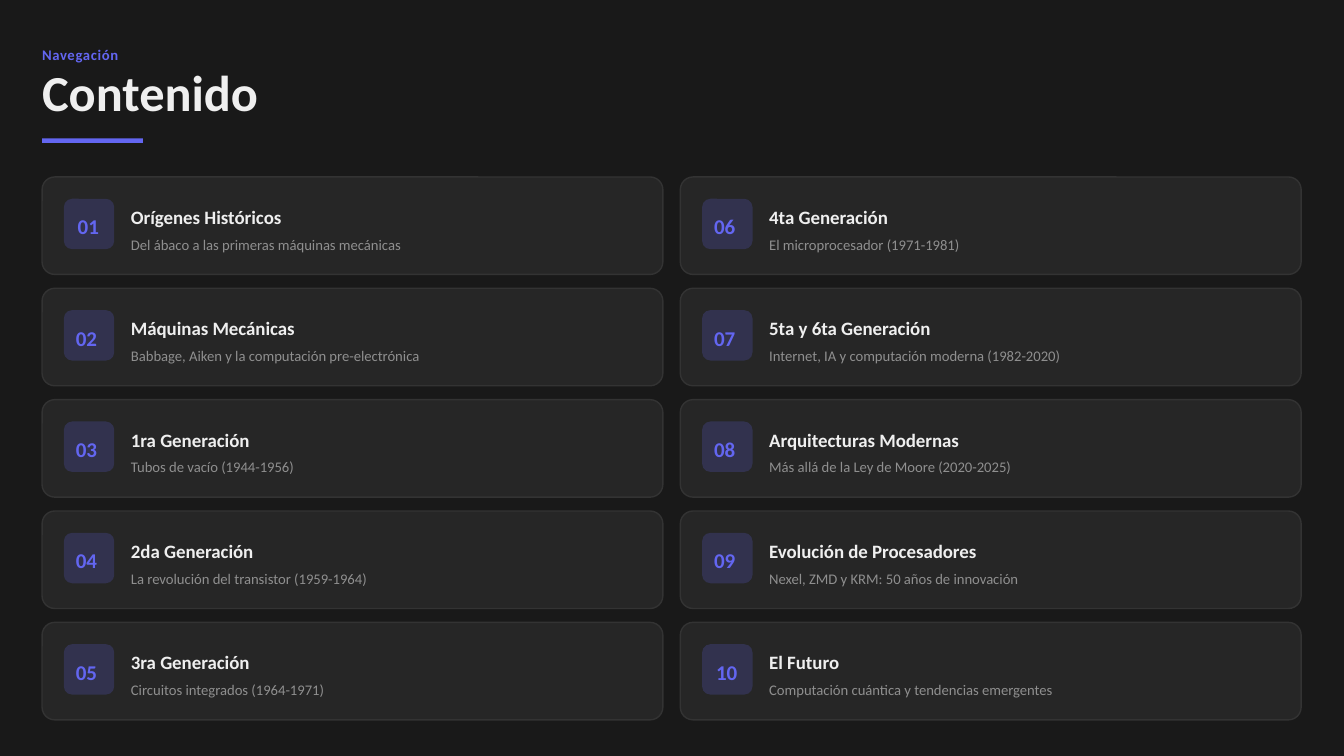
from lxml import etree
from pptx import Presentation, util as u
from pptx.dml import color
from pptx.enum import shapes, text
from pptx.oxml import ns

COLORS = {
    "background": "191919",
    "card": "262626",
    "border": "333333",
    "accent": "6366F1",
    "heading": "EFEFEF",
    "muted": "8F8F8F",
}
FONT = "Calibri"
TOPICS = [
    ("Orígenes Históricos", "Del ábaco a las primeras máquinas mecánicas"),
    ("Máquinas Mecánicas", "Babbage, Aiken y la computación pre-electrónica"),
    ("1ra Generación", "Tubos de vacío (1944-1956)"),
    ("2da Generación", "La revolución del transistor (1959-1964)"),
    ("3ra Generación", "Circuitos integrados (1964-1971)"),
    ("4ta Generación", "El microprocesador (1971-1981)"),
    ("5ta y 6ta Generación", "Internet, IA y computación moderna (1982-2020)"),
    ("Arquitecturas Modernas", "Más allá de la Ley de Moore (2020-2025)"),
    ("Evolución de Procesadores", "Nexel, ZMD y KRM: 50 años de innovación"),
    ("El Futuro", "Computación cuántica y tendencias emergentes"),
]
ROWS = 5


def rgb(name):
    return color.RGBColor.from_string(COLORS[name])


def write(shape, content, size, color_name, bold=False, line_spacing=1.2):
    frame = shape.text_frame
    frame.text = content
    frame.word_wrap = True
    frame.auto_size = text.MSO_AUTO_SIZE.NONE
    frame.vertical_anchor = text.MSO_ANCHOR.MIDDLE
    frame.margin_left = frame.margin_right = frame.margin_top = frame.margin_bottom = 0
    paragraph = frame.paragraphs[0]
    paragraph.alignment = text.PP_ALIGN.LEFT
    paragraph.line_spacing = line_spacing
    run = paragraph.runs[0]
    run.font.name = FONT
    run.font.size = u.Pt(size)
    run.font.bold = bold
    run.font.color.rgb = rgb(color_name)
    return run


def add_text(slide, left, top, width, height, *content, **style):
    box = slide.shapes.add_textbox(u.Cm(left), u.Cm(top), u.Cm(width), u.Cm(height))
    return write(box, *content, **style)


def add_panel(slide, left, top, width, height, fill, radius=0, border=None):
    kind = shapes.MSO_SHAPE.ROUNDED_RECTANGLE if radius else shapes.MSO_SHAPE.RECTANGLE
    panel = slide.shapes.add_shape(kind, u.Cm(left), u.Cm(top), u.Cm(width), u.Cm(height))
    if radius:
        panel.adjustments[0] = radius / min(width, height)
    panel.shadow.inherit = False
    panel.fill.solid()
    panel.fill.fore_color.rgb = rgb(fill)
    if border:
        panel.line.color.rgb = rgb(border)
        panel.line.width = u.Pt(1)
    else:
        panel.line.fill.background()
    return panel


def set_opacity(shape, percent):
    fill_color = shape._element.spPr.find(ns.qn("a:solidFill")).find(ns.qn("a:srgbClr"))
    etree.SubElement(fill_color, ns.qn("a:alpha"), val=str(percent * 1000))


def add_header(slide, left, top, width):
    section = add_text(slide, left, top, width, 0.53, "Navegación", 10.5, "accent", bold=True)
    section._r.get_or_add_rPr().set("spc", "50")
    title = slide.shapes.title
    title.left, title.top = u.Cm(left), u.Cm(top + 0.74)
    title.width, title.height = u.Cm(width), u.Cm(1.27)
    write(title, "Contenido", 36, "heading", bold=True, line_spacing=0.8)
    add_panel(slide, left, top + 2.43, 2.54, 0.11, "accent")


def add_card(slide, left, top, width, height, number, heading, summary):
    add_panel(slide, left, top, width, height, "card", radius=0.32, border="border")
    badge = add_panel(slide, left + 0.55, top + 0.55, 1.27, 1.27, "accent", radius=0.21)
    set_opacity(badge, 20)
    indent = 0.9 if "1" in number else 0.85
    add_text(slide, left + indent, top + 0.81, 0.9, 0.74, number, 15, "accent", bold=True)
    text_left, text_width = left + 2.24, width - 2.8
    add_text(slide, text_left, top + 0.55, text_width, 0.74,
             heading, 13.5, "heading", bold=True, line_spacing=1.3)
    add_text(slide, text_left, top + 1.39, text_width, 0.53, summary, 10.5, "muted")


def add_contents(slide, left, top, width, height):
    column_gap, row_gap = 0.44, 0.35
    card_width = (width - column_gap) / 2
    card_height = (height - row_gap * (ROWS - 1)) / ROWS
    for index, (heading, summary) in enumerate(TOPICS):
        column, row = divmod(index, ROWS)
        add_card(slide, left + column * (card_width + column_gap),
                 top + row * (card_height + row_gap), card_width, card_height,
                 f"{index + 1:02d}", heading, summary)


def main():
    presentation = Presentation()
    presentation.slide_width = u.Cm(33.87)
    presentation.slide_height = u.Cm(19.05)
    slide = presentation.slides.add_slide(presentation.slide_layouts.get_by_name("Title Only"))
    slide.background.fill.solid()
    slide.background.fill.fore_color.rgb = rgb("background")
    add_header(slide, 1.06, 1.06, 31.75)
    add_contents(slide, 1.06, 4.46, 31.73, 13.68)
    presentation.save("out.pptx")


if __name__ == "__main__":
    main()
